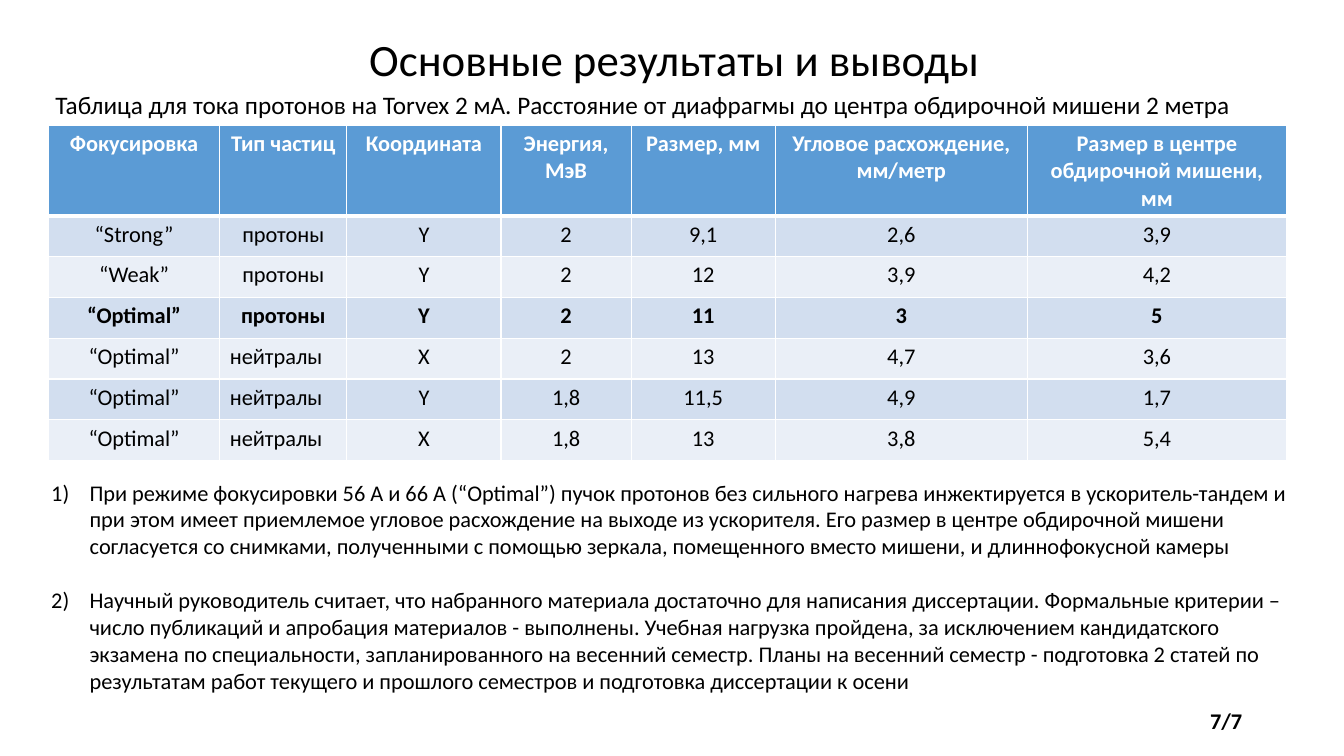
from dataclasses import dataclass

from lxml import etree
from pptx import Presentation
from pptx.dml.color import RGBColor
from pptx.enum import text
from pptx.oxml import ns
from pptx.util import Inches, Pt


@dataclass(frozen=True)
class Theme:
    font: str = "Calibri"
    ink: str = "000000"
    white: str = "FFFFFF"
    header: str = "5B9BD5"
    bands: tuple = ("D2DEEF", "EAEFF7")
    title: int = 32
    caption: int = 18
    body: int = 16


THEME = Theme()
ALIGN = text.PP_ALIGN

HEADINGS = ["Фокусировка", "Тип частиц", "Координата", "Энергия, МэВ", "Размер, мм",
            "Угловое расхождение, мм/метр", "Размер в центре обдирочной мишени, мм"]
MEASUREMENTS = [
    ["“Strong”", "протоны", "Y", "2", "9,1", "2,6", "3,9"],
    ["“Weak”", "протоны", "Y", "2", "12", "3,9", "4,2"],
    ["“Optimal”", "протоны", "Y", "2", "11", "3", "5"],
    ["“Optimal”", "нейтралы", "X", "2", "13", "4,7", "3,6"],
    ["“Optimal”", "нейтралы", "Y", "1,8", "11,5", "4,9", "1,7"],
    ["“Optimal”", "нейтралы", "X", "1,8", "13", "3,8", "5,4"],
]
BEST_ROW = 3
COLUMN_WIDTHS = [1.7, 1.26, 1.53, 1.29, 1.43, 2.5, 2.57]
TABLE_HEIGHT = 3.33
HEADER_HEIGHT = 0.9

CONCLUSIONS = [
    "При режиме фокусировки 56 А и 66 А (“Optimal”) пучок протонов без сильного нагрева "
    "инжектируется в ускоритель-тандем и при этом имеет приемлемое угловое расхождение на "
    "выходе из ускорителя. Его размер в центре обдирочной мишени согласуется со снимками, "
    "полученными с помощью зеркала, помещенного вместо мишени, и длиннофокусной камеры",
    "Научный руководитель считает, что набранного материала достаточно для написания "
    "диссертации. Формальные критерии – число публикаций и апробация материалов - выполнены. "
    "Учебная нагрузка пройдена, за исключением кандидатского экзамена по специальности, "
    "запланированного на весенний семестр. Планы на весенний семестр - подготовка 2 статей по "
    "результатам работ текущего и прошлого семестров и подготовка диссертации к осени",
]


def style(paragraph, size, color=THEME.ink, bold=False, align=ALIGN.LEFT):
    paragraph.alignment = align
    font = paragraph.font
    font.name, font.size, font.bold = THEME.font, Pt(size), bold
    font.color.rgb = RGBColor.from_string(color)


def add_box(slide, left, top, width, height, anchor=text.MSO_ANCHOR.TOP):
    box = slide.shapes.add_textbox(Inches(left), Inches(top), Inches(width), Inches(height))
    frame = box.text_frame
    frame.word_wrap = True
    frame.vertical_anchor = anchor
    return frame


def add_line(slide, content, place, size, anchor=text.MSO_ANCHOR.TOP, **look):
    paragraph = add_box(slide, *place, anchor).paragraphs[0]
    paragraph.text = content
    style(paragraph, size, **look)
    return paragraph


def add_border(cell, side, width):
    edge = etree.SubElement(cell._tc.get_or_add_tcPr(), ns.qn(f"a:ln{side}"), w=str(Pt(width)))
    fill = etree.SubElement(edge, ns.qn("a:solidFill"))
    etree.SubElement(fill, ns.qn("a:srgbClr"), val=THEME.white)


def fill_cell(cell, content, row):
    for side in "LRTB":
        heavy = (row, side) in ((0, "B"), (1, "T"))
        add_border(cell, side, 3 if heavy else 1)
    cell.fill.solid()
    background = THEME.bands[(row - 1) % 2] if row else THEME.header
    cell.fill.fore_color.rgb = RGBColor.from_string(background)
    cell.text = content
    style(cell.text_frame.paragraphs[0], THEME.body,
          color=THEME.ink if row else THEME.white,
          bold=row in (0, BEST_ROW),
          align=ALIGN.LEFT if content == "нейтралы" else ALIGN.CENTER)


def add_results(slide):
    rows = [HEADINGS] + MEASUREMENTS
    table = slide.shapes.add_table(
        len(rows), len(HEADINGS), Inches(0.48), Inches(1.24),
        Inches(sum(COLUMN_WIDTHS)), Inches(TABLE_HEIGHT)).table
    for column, width in zip(table.columns, COLUMN_WIDTHS):
        column.width = Inches(width)
    row_height = (TABLE_HEIGHT - HEADER_HEIGHT) / len(MEASUREMENTS)
    for r, values in enumerate(rows):
        table.rows[r].height = Inches(row_height if r else HEADER_HEIGHT)
        for c, value in enumerate(values):
            fill_cell(table.cell(r, c), value, r)


def add_conclusions(slide):
    frame = add_box(slide, 0.41, 4.7, 12.55, 2.56)
    for i, conclusion in enumerate(CONCLUSIONS):
        paragraph = frame.add_paragraph() if i else frame.paragraphs[0]
        paragraph.text = conclusion
        properties = paragraph._p.get_or_add_pPr()
        properties.set("marL", str(Inches(0.38)))
        properties.set("indent", str(-Inches(0.38)))
        etree.SubElement(properties, ns.qn("a:buFont"), typeface=THEME.font)
        etree.SubElement(properties, ns.qn("a:buAutoNum"), type="arabicParenR")
        if i:
            paragraph.space_before = Pt(19.5)
        style(paragraph, THEME.body)


def main():
    deck = Presentation()
    deck.slide_width, deck.slide_height = Inches(13.33), Inches(7.5)
    slide = deck.slides.add_slide(deck.slide_layouts[6])
    title = add_line(slide, "Основные результаты и выводы", (0.94, -0.11, 11.5, 1.45),
                     THEME.title, text.MSO_ANCHOR.MIDDLE, align=ALIGN.CENTER)
    title.line_spacing = 0.9
    add_results(slide)
    add_line(slide, "Таблица для тока протонов на Torvex 2 мА. "
                    "Расстояние от диафрагмы до центра обдирочной мишени 2 метра",
             (0.45, 0.84, 12.07, 0.4), THEME.caption)
    add_conclusions(slide)
    add_line(slide, "7/7", (9.42, 6.95, 3, 0.4), THEME.body, text.MSO_ANCHOR.MIDDLE,
             bold=True, align=ALIGN.RIGHT)
    deck.save("out.pptx")


if __name__ == "__main__":
    main()
